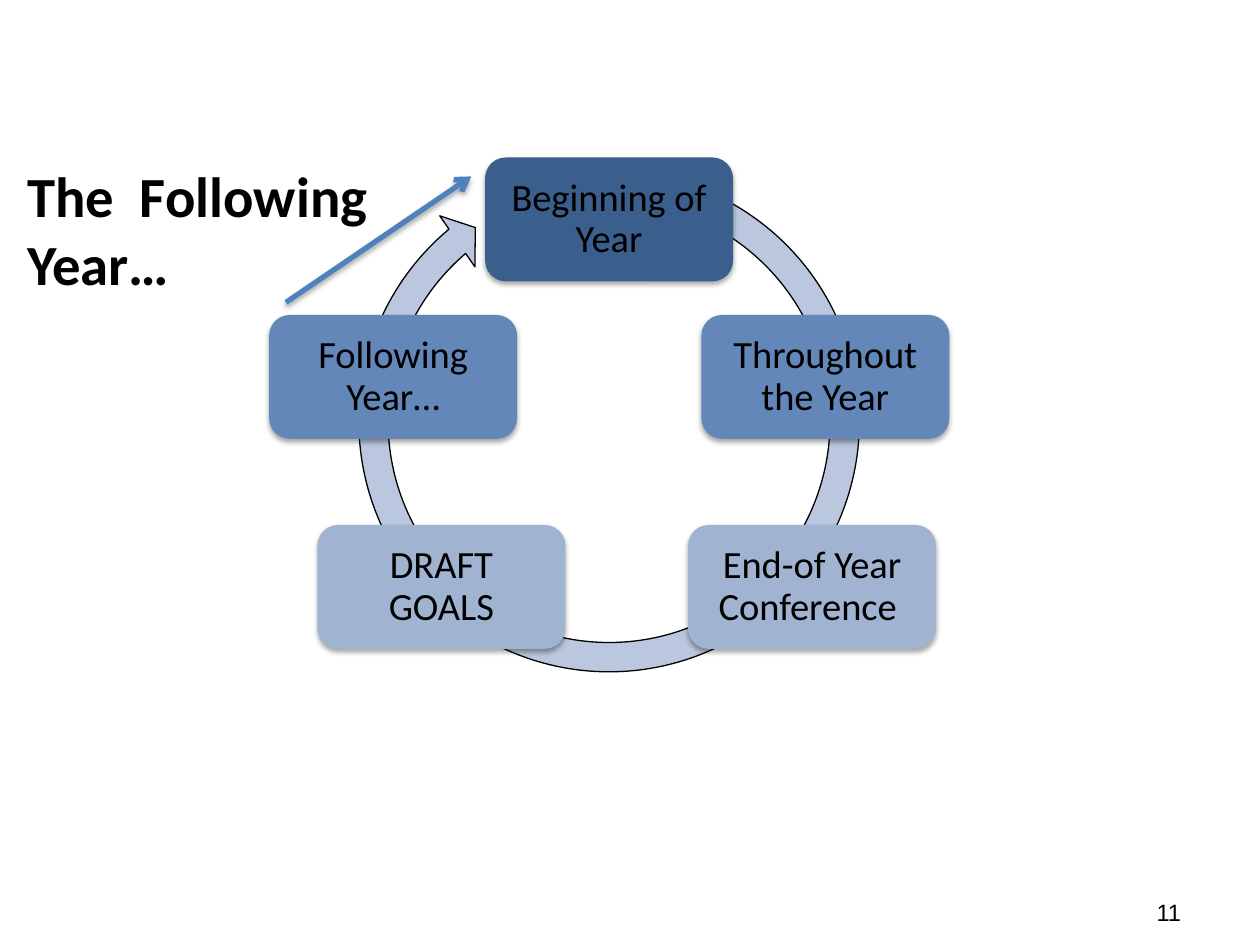
from dataclasses import dataclass

from pptx import Presentation
from pptx.dml.color import RGBColor
from pptx.enum import shapes, text
from pptx.oxml import parse_xml
from pptx.oxml.ns import nsdecls, qn
from pptx.util import Pt

BLACK = RGBColor(0x00, 0x00, 0x00)
RING_BLUE = RGBColor(0xBB, 0xC7, 0xDE)
DARK_BLUE = RGBColor(0x3A, 0x5F, 0x8C)
MID_BLUE = RGBColor(0x63, 0x87, 0xB9)
LIGHT_BLUE = RGBColor(0xA0, 0xB3, 0xD1)
ARROW_BLUE = RGBColor(0x4F, 0x81, 0xBD)

STAGE_WIDTH, STAGE_HEIGHT = 141.7, 70.8


@dataclass(frozen=True)
class Stage:
    label: str
    left: float
    top: float
    fill: RGBColor


STAGES = [
    Stage("Beginning of Year", 277.2, 90, DARK_BLUE),
    Stage("Throughout the Year", 400.8, 180, MID_BLUE),
    Stage("End-of Year Conference ", 393.2, 300, LIGHT_BLUE),
    Stage("DRAFT GOALS", 181.4, 300, LIGHT_BLUE),
    Stage("Following Year…", 153.8, 180, MID_BLUE),
]


def write_text(shape, content: str, *, size: float, font: str = "Calibri", bold: bool = False,
               align=text.PP_ALIGN.LEFT, anchor=text.MSO_ANCHOR.TOP, line_spacing: float = 1.0,
               wrap: bool = True, margins: tuple[float, float] = (7.2, 3.6)) -> None:
    """Fill a shape with one paragraph; margins are horizontal, vertical."""
    frame = shape.text_frame
    frame.word_wrap = wrap
    frame.vertical_anchor = anchor
    frame.margin_left = frame.margin_right = Pt(margins[0])
    frame.margin_top = frame.margin_bottom = Pt(margins[1])
    paragraph = frame.paragraphs[0]
    paragraph.alignment = align
    paragraph.line_spacing = line_spacing
    run = paragraph.add_run()
    run.text = content
    run.font.name = font
    run.font.size = Pt(size)
    run.font.bold = bold
    run.font.color.rgb = BLACK


def add_text(slide, content: str, left: float, top: float, width: float, height: float,
             **text_format) -> None:
    box = slide.shapes.add_textbox(Pt(left), Pt(top), Pt(width), Pt(height))
    write_text(box, content, **text_format)


def add_soft_shadow(shape) -> None:
    """Cast a faint shadow straight down; call after the line is set."""
    shape._element.spPr.append(parse_xml(
        f'<a:effectLst {nsdecls("a")}>'
        f'<a:outerShdw blurRad="{Pt(3.1)}" dist="{Pt(1.8)}" dir="5400000" rotWithShape="0">'
        '<a:srgbClr val="000000"><a:alpha val="35000"/></a:srgbClr>'
        '</a:outerShdw></a:effectLst>'))


def add_cycle_ring(slide) -> None:
    ring = slide.shapes.add_shape(shapes.MSO_SHAPE.CIRCULAR_ARROW,
                                  Pt(195.8), Pt(88.6), Pt(304.6), Pt(304.6))
    for index, value in enumerate((0.055, 3.307, 137.938, 173.751, 0.058)):
        ring.adjustments[index] = value
    ring.fill.solid()
    ring.fill.fore_color.rgb = RING_BLUE
    ring.line.color.rgb = BLACK
    ring.line.width = Pt(0.75)
    ring.shadow.inherit = False


def add_stage(slide, stage: Stage) -> None:
    box = slide.shapes.add_shape(shapes.MSO_SHAPE.ROUNDED_RECTANGLE, Pt(stage.left),
                                 Pt(stage.top), Pt(STAGE_WIDTH), Pt(STAGE_HEIGHT))
    box.fill.solid()
    box.fill.fore_color.rgb = stage.fill
    box.line.fill.background()
    add_soft_shadow(box)
    write_text(box, stage.label, size=22, align=text.PP_ALIGN.CENTER,
               anchor=text.MSO_ANCHOR.MIDDLE, line_spacing=0.9, margins=(10, 10))


def add_pointer(slide) -> None:
    pointer = slide.shapes.add_connector(shapes.MSO_CONNECTOR.STRAIGHT,
                                         Pt(163.4), Pt(172.8), Pt(269.3), Pt(100.8))
    pointer.line.color.rgb = ARROW_BLUE
    pointer.line.width = Pt(3)
    line = pointer._element.spPr.find(qn("a:ln"))
    line.append(parse_xml(f'<a:tailEnd {nsdecls("a")} type="arrow"/>'))
    add_soft_shadow(pointer)


def main() -> None:
    presentation = Presentation()
    presentation.slide_width, presentation.slide_height = Pt(720), Pt(540)
    slide = presentation.slides.add_slide(presentation.slide_layouts[6])

    add_text(slide, "11", 653.8, 509.8, 31, 23.8, size=13.5, font="Arial", wrap=False)
    add_text(slide, "The  Following Year…", 8.6, 88.6, 246.2, 24.5, size=32.4, bold=True)
    add_cycle_ring(slide)
    for stage in STAGES:
        add_stage(slide, stage)
    add_pointer(slide)

    presentation.save("out.pptx")


if __name__ == "__main__":
    main()
